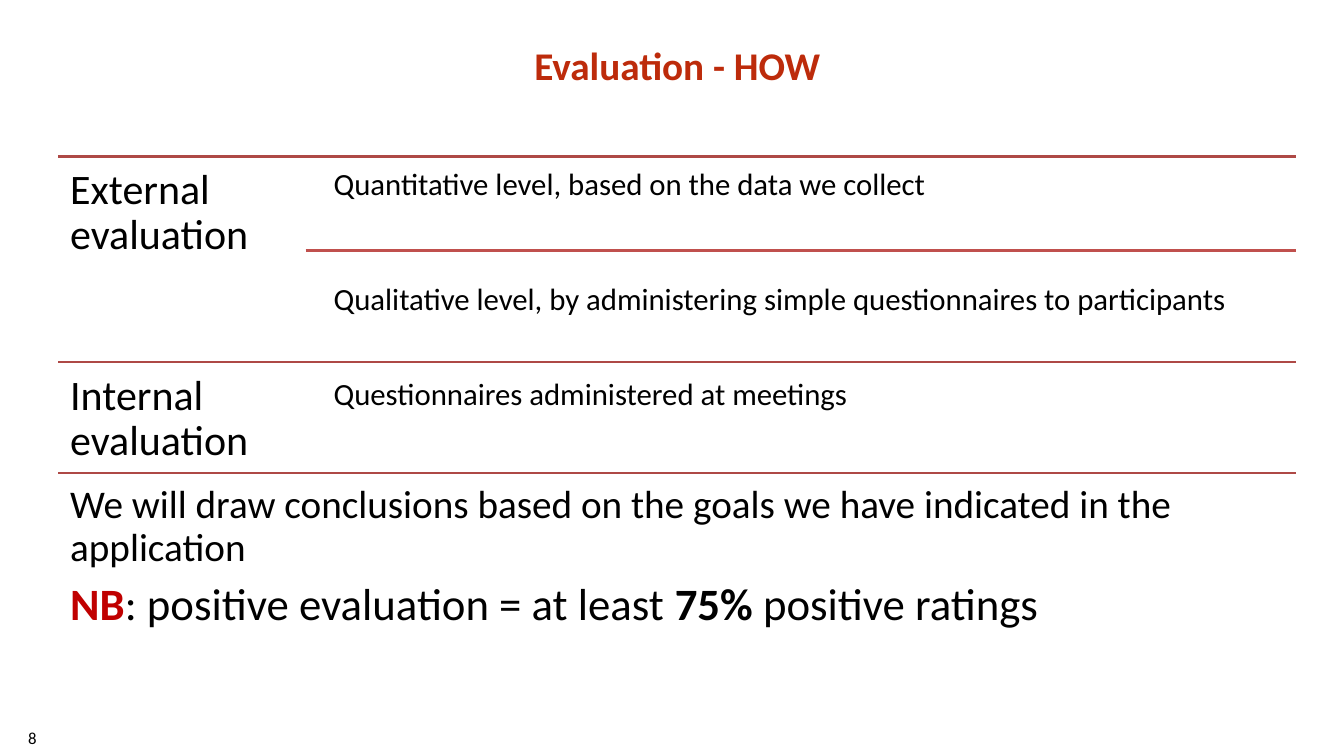
from lxml.etree import SubElement
from pptx import Presentation
from pptx.dml.color import RGBColor
from pptx.enum.shapes import MSO_CONNECTOR as Connector
from pptx.enum.text import MSO_ANCHOR as Anchor, MSO_AUTO_SIZE as AutoSize, PP_ALIGN as Align
from pptx.oxml.ns import qn
from pptx.util import Cm, Pt

BLACK, TITLE_RED, NOTE_RED = "000000", "BD2B0B", "C00000"
SECTION_RULE, DETAIL_RULE = "AE4946", "C0504D"

LEFT, WIDTH = 1.47, 31.19
DETAIL_INDENT, LABEL_WIDTH, TEXT_INDENT = 6.23, 6.25, 6.71

# Section label, then its details as (text, row height, text offset in the row)
SECTIONS = [
    ("External evaluation", [
        ("Quantitative level, based on the data we collect", 2.38, 0.08),
        ("Qualitative level, by administering simple questionnaires to participants", 2.8, 0.6),
    ]),
    ("Internal evaluation", [
        ("Questionnaires administered at meetings", 2.8, 0.2),
    ]),
]
# Each paragraph is a list of runs: text, size, colour, bold
CONCLUSIONS = [
    [("We will draw conclusions based on the goals we have indicated in the application",
      28, BLACK, False)],
    [("NB", 32, NOTE_RED, True), (": positive evaluation = at least ", 32, BLACK, False),
     ("75% ", 32, BLACK, True), ("positive ratings", 32, BLACK, False)],
]


def color(value):
    return RGBColor.from_string(value)


def format_run(run, size, value, bold=False):
    run.font.name = "Calibri"
    run.font.size = Pt(size)
    run.font.bold = bold
    run.font.color.rgb = color(value)


def add_rule(slide, left, top, right, value):
    line = slide.shapes.add_connector(
        Connector.STRAIGHT, Cm(left), Cm(top), Cm(right), Cm(top))
    line.line.color.rgb = color(value)
    line.line.width = Pt(2)
    SubElement(line._element.spPr, qn("a:effectLst"))


def add_text(slide, left, top, width, height, paragraphs, inset, line_spacing=0.9):
    frame = slide.shapes.add_textbox(Cm(left), Cm(top), Cm(width), Cm(height)).text_frame
    frame.word_wrap = True
    frame.margin_left = frame.margin_right = Cm(inset)
    frame.margin_top = frame.margin_bottom = Cm(inset)
    for index, runs in enumerate(paragraphs):
        paragraph = frame.paragraphs[0] if index == 0 else frame.add_paragraph()
        paragraph.line_spacing = line_spacing
        paragraph.space_after = Pt(9)
        for text, size, value, bold in runs:
            run = paragraph.add_run()
            run.text = text
            format_run(run, size, value, bold)


def add_title(slide, left, top, width, height):
    title = slide.shapes.title
    title.left, title.top, title.width, title.height = Cm(left), Cm(top), Cm(width), Cm(height)
    frame = title.text_frame
    frame.text = "Evaluation - HOW"
    frame.auto_size = AutoSize.NONE
    frame.vertical_anchor = Anchor.TOP
    paragraph = frame.paragraphs[0]
    paragraph.alignment = Align.CENTER
    paragraph.line_spacing = Pt(22)
    format_run(paragraph.runs[0], 28, TITLE_RED, True)


def add_section(slide, left, top, width, label, details):
    """Draw one section and return the position of its lower edge."""
    right = left + width
    height = sum(row_height for _, row_height, _ in details)
    add_rule(slide, left, top, right, SECTION_RULE)
    add_text(slide, left, top, LABEL_WIDTH, height, [[(label, 30, BLACK, False)]], 0.3)
    for text, row_height, offset in details:
        add_text(slide, left + TEXT_INDENT, top + offset, width - TEXT_INDENT, 1.85,
                 [[(text, 22, BLACK, False)]], 0.23)
        top += row_height
        add_rule(slide, left + DETAIL_INDENT, top, right, DETAIL_RULE)
    return top


def add_conclusions(slide, left, top, width, height):
    add_rule(slide, left, top, left + width, SECTION_RULE)
    add_text(slide, left, top, width, height, CONCLUSIONS, 0.3)


def main():
    presentation = Presentation()
    presentation.slide_width, presentation.slide_height = Cm(33.87), Cm(19.05)
    slide = presentation.slides.add_slide(presentation.slide_layouts[5])

    # Title
    add_title(slide, LEFT, 1.32, WIDTH, 1.8)

    # Evaluation sections, stacked
    top = 3.94
    for label, details in SECTIONS:
        top = add_section(slide, LEFT, top, WIDTH, label, details)

    # Conclusions
    add_conclusions(slide, LEFT, top, WIDTH, 4)

    # Slide number
    add_text(slide, 0.51, 18.14, 2.2, 0.76, [[("8", 12, BLACK, False)]], 0.2, 1.0)

    presentation.save("out.pptx")


if __name__ == "__main__":
    main()
